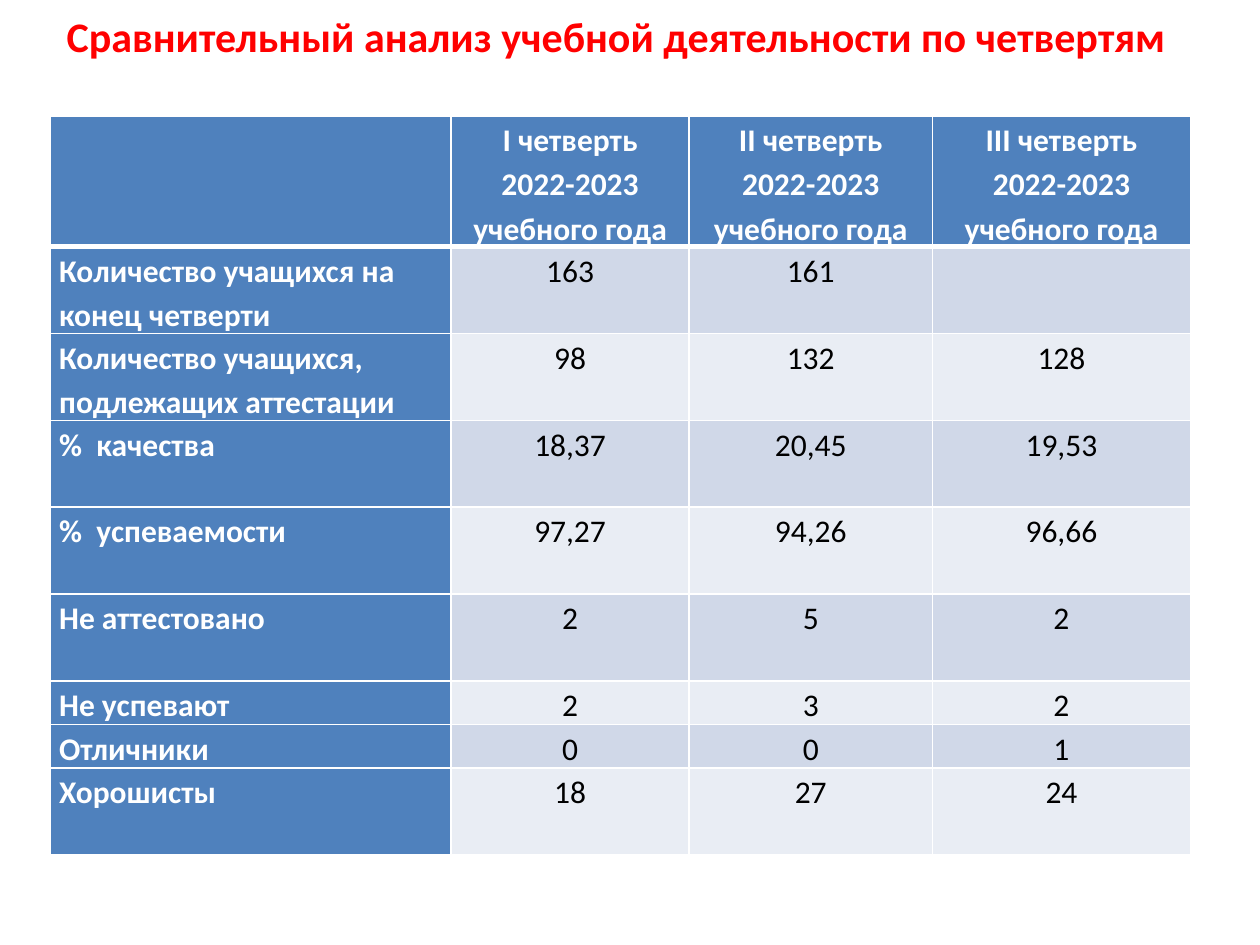
from lxml.etree import SubElement
from pptx import Presentation
from pptx.dml.color import RGBColor
from pptx.enum.text import MSO_ANCHOR, PP_ALIGN
from pptx.oxml.ns import qn
from pptx.util import Inches, Pt

FONT = "Calibri"
RED = RGBColor(0xFF, 0x00, 0x00)
WHITE = RGBColor(0xFF, 0xFF, 0xFF)
BLACK = RGBColor(0x00, 0x00, 0x00)
BLUE = RGBColor(0x4F, 0x81, 0xBD)
BANDS = (RGBColor(0xD0, 0xD8, 0xE8), RGBColor(0xE9, 0xED, 0xF4))

TITLE = "Сравнительный анализ учебной деятельности по четвертям"
HEADER = [""] + [f"{n} четверть\n2022-2023\nучебного года" for n in ("I", "II", "III")]
ROWS = [
    ("Количество учащихся на конец четверти", "163", "161", ""),
    ("Количество учащихся,\nподлежащих аттестации", "98", "132", "128"),
    ("%  качества", "18,37", "20,45", "19,53"),
    ("%  успеваемости", "97,27", "94,26", "96,66"),
    ("Не аттестовано", "2", "5", "2"),
    ("Не успевают", "2", "3", "2"),
    ("Отличники", "0", "0", "1"),
    ("Хорошисты", "18", "27", "24"),
]
COL_WIDTHS = (3.18, 1.89, 1.93, 2.05)
HEADER_H, TALL, SHORT = 1.03, 0.69, 0.345
ROW_HEIGHTS = (HEADER_H, *[TALL] * 5, SHORT, SHORT, TALL)


def set_font(p, size, color, bold):
    p.font.name = FONT
    p.font.size = Pt(size)
    p.font.bold = bold
    p.font.color.rgb = color


def add_title(s):
    tf = s.shapes.add_textbox(Inches(0.43), Inches(-0.18), Inches(9.02), Inches(1.4)).text_frame
    tf.word_wrap = True
    tf.vertical_anchor = MSO_ANCHOR.TOP
    tf.margin_top = Inches(0.26)
    tf.text = TITLE
    set_font(tf.paragraphs[0], 24, RED, True)


def set_borders(cell, bottom=1, top=1):
    tc_pr = cell._tc.get_or_add_tcPr()
    for side, width in (("L", 1), ("R", 1), ("T", top), ("B", bottom)):
        ln = SubElement(tc_pr, qn(f"a:ln{side}"), w=str(Pt(width)))
        SubElement(SubElement(ln, qn("a:solidFill")), qn("a:srgbClr"), val=str(WHITE))


def fill_cell(cell, text, row, col):
    is_heading = row == 0 or col == 0
    set_borders(cell, bottom=3 if row == 0 else 1, top=3 if row == 1 else 1)
    cell.fill.solid()
    cell.fill.fore_color.rgb = BLUE if is_heading else BANDS[(row - 1) % 2]
    cell.margin_left = cell.margin_right = Inches(0.07)
    cell.margin_top = cell.margin_bottom = 0
    cell.text = text
    for p in cell.text_frame.paragraphs:
        p.alignment = PP_ALIGN.CENTER if col else PP_ALIGN.LEFT
        p.line_spacing = 1.15
        set_font(p, 18, WHITE if is_heading else BLACK, is_heading)


def add_results_table(s):
    data = [HEADER, *ROWS]
    table = s.shapes.add_table(
        len(data), len(HEADER), Inches(0.4), Inches(0.92),
        Inches(sum(COL_WIDTHS)), Inches(sum(ROW_HEIGHTS)),
    ).table
    table.first_col = True
    for column, width in zip(table.columns, COL_WIDTHS):
        column.width = Inches(width)
    for row, height in zip(table.rows, ROW_HEIGHTS):
        row.height = Inches(height)
    for i, values in enumerate(data):
        for j, text in enumerate(values):
            fill_cell(table.cell(i, j), text, i, j)


def main():
    prs = Presentation()
    prs.slide_width, prs.slide_height = Inches(10), Inches(7.5)
    s = prs.slides.add_slide(prs.slide_layouts[6])
    # Heading
    add_title(s)
    # Results by quarter
    add_results_table(s)
    prs.save("out.pptx")


if __name__ == "__main__":
    main()
